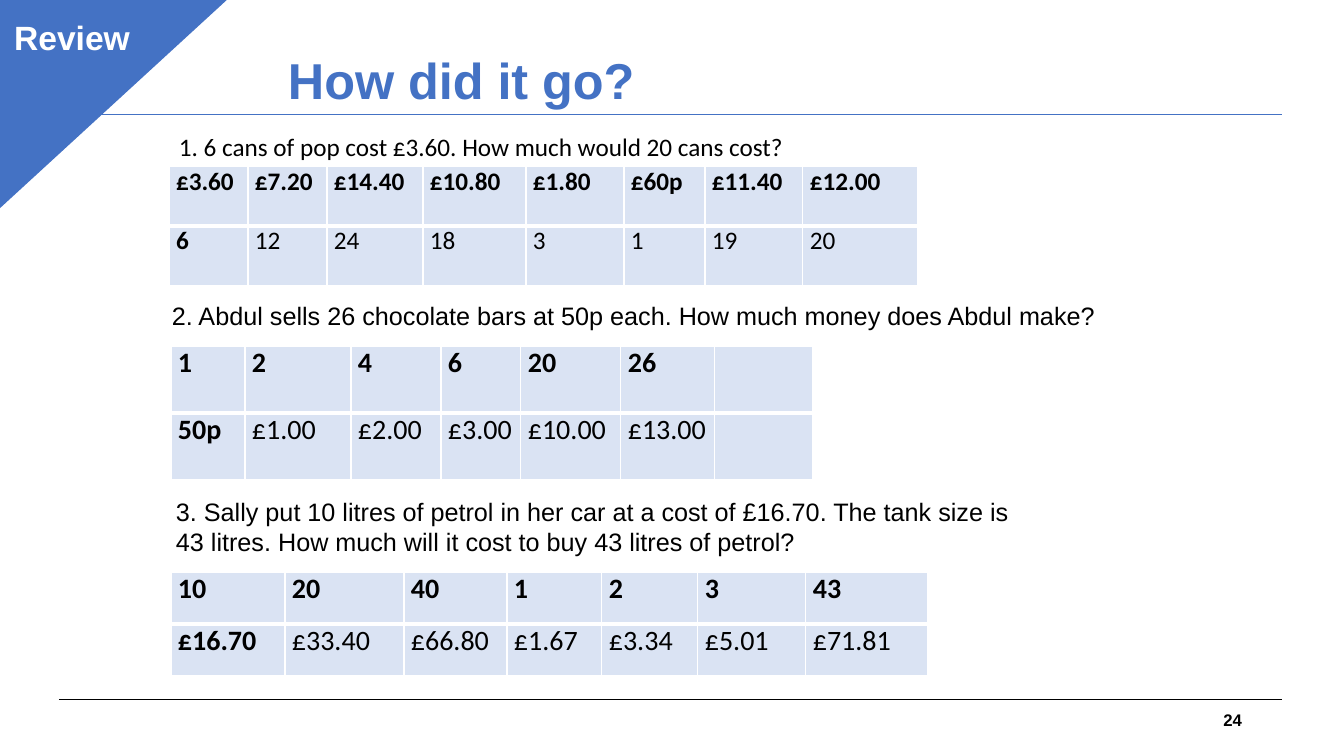
from lxml.etree import SubElement
from pptx import Presentation
from pptx.dml.color import RGBColor
from pptx.enum.shapes import MSO_CONNECTOR, MSO_SHAPE
from pptx.enum.text import MSO_ANCHOR, PP_ALIGN
from pptx.oxml import parse_xml
from pptx.oxml.ns import nsdecls, qn
from pptx.util import Emu, Pt

EMU_PER_PX = 914400 / 100.8
COLORS = {"blue": "4472C4", "pale": "DAE3F3", "white": "FFFFFF", "black": "000000"}


def px(length):
    return Emu(round(length * EMU_PER_PX))


def color(name):
    return RGBColor.from_string(COLORS[name])


def add_run(paragraph, text, size, font="Arial", ink="black", bold=False):
    run = paragraph.add_run()
    run.text = text
    run.font.size = Pt(size)
    run.font.name = font
    run.font.bold = bold
    run.font.color.rgb = color(ink)


def add_text(slide, box, text, size, anchor=MSO_ANCHOR.TOP, align=PP_ALIGN.LEFT,
             spacing=None, **style):
    shape = slide.shapes.add_textbox(*map(px, box))
    frame = shape.text_frame
    frame.word_wrap = True
    frame.vertical_anchor = anchor
    paragraph = frame.paragraphs[0]
    paragraph.alignment = align
    paragraph.line_spacing = spacing
    add_run(paragraph, text, size, **style)


def add_rule(slide, left, right, y, ink):
    connector = slide.shapes.add_connector(
        MSO_CONNECTOR.STRAIGHT, px(left), px(y), px(right), px(y))
    connector.line.color.rgb = color(ink)
    connector.line.width = Pt(0.75)
    SubElement(connector._element.spPr, qn("a:effectLst"))


def add_blue_shape(slide, kind, box, line_width):
    shape = slide.shapes.add_shape(kind, *map(px, box))
    shape.shadow.inherit = False
    shape.fill.solid()
    shape.fill.fore_color.rgb = color("blue")
    shape.line.color.rgb = color("blue")
    shape.line.width = Pt(line_width)
    return shape


def add_corner(slide, box, label):
    left, top, width, height = box
    triangle = add_blue_shape(slide, MSO_SHAPE.ISOSCELES_TRIANGLE, box, 1)
    triangle.adjustments[0] = 0
    triangle._element.spPr.find(qn("a:xfrm")).set("flipV", "1")
    tag = add_blue_shape(slide, MSO_SHAPE.RECTANGLE, (left + 4, top + 14, 142, 50), 0.75)
    tag.text_frame.vertical_anchor = MSO_ANCHOR.TOP
    paragraph = tag.text_frame.paragraphs[0]
    paragraph.alignment = PP_ALIGN.CENTER
    add_run(paragraph, label, 24, ink="white", bold=True)


def add_frame(slide, box, title, number):
    left, top, width, height = box
    right, bottom = left + width, top + height
    add_rule(slide, left, right, bottom, "black")
    add_rule(slide, left, right, top, "blue")
    add_text(slide, (left + 219, top - 105, 1060, 146), title, 36,
             anchor=MSO_ANCHOR.MIDDLE, spacing=0.9, ink="blue", bold=True)
    add_text(slide, (right - 332, bottom, 302, 40), number, 12,
             anchor=MSO_ANCHOR.MIDDLE, align=PP_ALIGN.RIGHT, bold=True)


def set_borders(cell, widths):
    properties = cell._tc.get_or_add_tcPr()
    for index, (side, width) in enumerate(widths.items()):
        properties.insert(index, parse_xml(
            f'<a:ln{side} {nsdecls("a")} w="{Pt(width)}"><a:solidFill>'
            f'<a:srgbClr val="{COLORS["white"]}"/></a:solidFill></a:ln{side}>'))


def add_ratio_table(slide, left, top, column_widths, row_height, size, rows):
    shape = slide.shapes.add_table(
        len(rows), len(column_widths), px(left), px(top),
        px(sum(column_widths)), px(row_height * len(rows)))
    table = shape.table
    for column, width in zip(table.columns, column_widths):
        column.width = px(width)
    for row_index, values in enumerate(rows):
        table.rows[row_index].height = px(row_height)
        heading = row_index == 0
        for column_index, value in enumerate(values):
            cell = table.cell(row_index, column_index)
            cell.margin_left = cell.margin_right = px(7)
            cell.margin_top = cell.margin_bottom = 0
            cell.fill.solid()
            cell.fill.fore_color.rgb = color("pale")
            set_borders(cell, {"L": 1, "R": 1, "T": 1 if heading else 3,
                               "B": 3 if heading else 1})
            if value:
                add_run(cell.text_frame.paragraphs[0], value, size, font="Calibri",
                        bold=heading or column_index == 0)


def add_question(slide, box, text, font, table):
    add_text(slide, box, text, 18, font=font)
    add_ratio_table(slide, **table)


QUESTIONS = [
    ((169, 126, 1115, 136), "1. 6 cans of pop cost £3.60. How much would 20 cans cost?", "Calibri",
     {"left": 169, "top": 166, "row_height": 60, "size": 18,
      "column_widths": [79, 79, 96, 103, 98, 81, 98, 115],
      "rows": [["£3.60", "£7.20", "£14.40", "£10.80", "£1.80", "£60p", "£11.40", "£12.00"],
               ["6", "12", "24", "18", "3", "1", "19", "20"]]}),
    ((162, 295, 1019, 40),
     "2. Abdul sells 26 chocolate bars at 50p each. How much money does Abdul make?", "Arial",
     {"left": 171, "top": 346, "row_height": 67, "size": 20,
      "column_widths": [74, 106, 90, 80, 100, 94, 98],
      "rows": [["1", "2", "4", "6", "20", "26", ""],
               ["50p", "£1.00", "£2.00", "£3.00", "£10.00", "£13.00", ""]]}),
    ((166, 491, 867, 72),
     "3. Sally put 10 litres of petrol in her car at a cost of £16.70. The tank size is "
     "43 litres. How much will it cost to buy 43 litres of petrol?", "Arial",
     {"left": 171, "top": 572, "row_height": 52, "size": 20,
      "column_widths": [114, 119, 103, 95, 96, 108, 122],
      "rows": [["10", "20", "40", "1", "2", "3", "43"],
               ["£16.70", "£33.40", "£66.80", "£1.67", "£3.34", "£5.01", "£71.81"]]}),
]


def main():
    presentation = Presentation()
    presentation.slide_width = px(1344)
    presentation.slide_height = px(756)
    slide = presentation.slides.add_slide(presentation.slide_layouts[6])
    add_frame(slide, (59, 115, 1223, 585), "How did it go?", "24")
    add_corner(slide, (-3, -2, 231, 212), "Review")
    for question in QUESTIONS:
        add_question(slide, *question)
    presentation.save("out.pptx")


if __name__ == "__main__":
    main()
